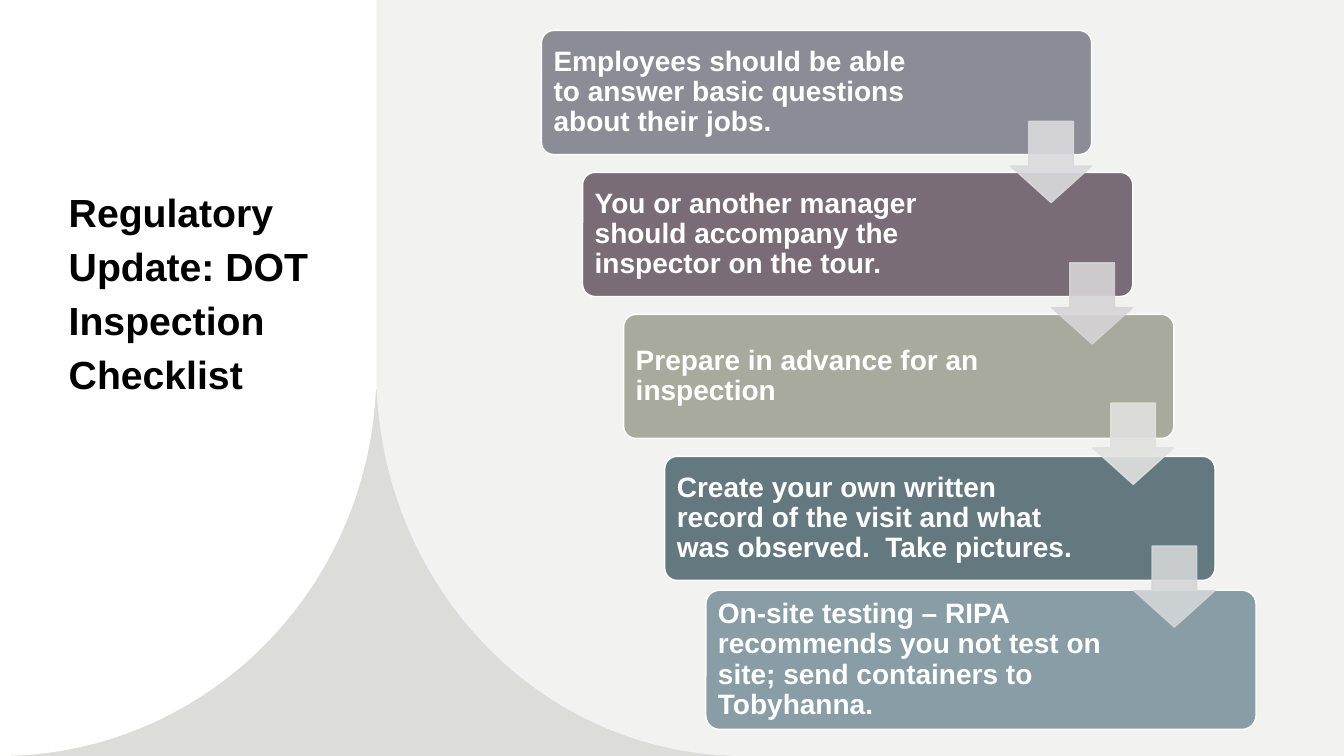
from math import cos, pi, sin

from lxml import etree
from pptx import Presentation
from pptx.dml.color import RGBColor
from pptx.enum.shapes import MSO_SHAPE
from pptx.enum.text import MSO_ANCHOR
from pptx.oxml.ns import qn
from pptx.util import Pt

RECT = MSO_SHAPE.RECTANGLE
ROUNDED = MSO_SHAPE.ROUNDED_RECTANGLE
DOWN_ARROW = MSO_SHAPE.DOWN_ARROW
TOP, MIDDLE = MSO_ANCHOR.TOP, MSO_ANCHOR.MIDDLE

SLIDE_W, SLIDE_H = 960, 540
WHITE = "FFFFFF"


def color(hex_string):
    return RGBColor.from_string(hex_string)


def quarter_arc(cx, cy, rx, ry, start, end, steps=60):
    """Points on a quarter ellipse, angles in radians with y downwards."""
    angles = (start + (end - start) * i / steps for i in range(steps + 1))
    return [(cx + rx * cos(a), cy + ry * sin(a)) for a in angles]


class ChecklistSlide:
    font = "Arial"

    def __init__(self, slide):
        self.slide = slide

    def paint(self, shape, fill, line=None, opacity=100):
        shape.shadow.inherit = False
        shape.fill.solid()
        shape.fill.fore_color.rgb = color(fill)
        if line:
            shape.line.color.rgb = color(line)
            shape.line.width = Pt(1)
        else:
            shape.line.fill.background()
        if opacity < 100:
            for srgb in list(shape.element.spPr.iter(qn("a:srgbClr"))):
                etree.SubElement(srgb, qn("a:alpha"), val=str(opacity * 1000))

    def preset(self, kind, box, fill, line=None, adjustments=(), opacity=100):
        shape = self.slide.shapes.add_shape(kind, *map(Pt, box))
        for i, value in enumerate(adjustments):
            shape.adjustments[i] = value
        self.paint(shape, fill, line, opacity)

    def outline(self, points, fill):
        start, *rest = [(Pt(x), Pt(y)) for x, y in points]
        builder = self.slide.shapes.build_freeform(*start)
        builder.add_line_segments(rest, close=True)
        self.paint(builder.convert_to_shape(), fill)

    def text(self, box, wording, size, ink, spacing, anchor, inset):
        frame = self.slide.shapes.add_textbox(*map(Pt, box)).text_frame
        frame.word_wrap = True
        frame.vertical_anchor = anchor
        frame.margin_left = frame.margin_right = Pt(inset[0])
        frame.margin_top = frame.margin_bottom = Pt(inset[1])
        paragraph = frame.paragraphs[0]
        paragraph.text = wording
        paragraph.line_spacing = spacing
        paragraph.font.name = self.font
        paragraph.font.size = Pt(size)
        paragraph.font.bold = True
        paragraph.font.color.rgb = color(ink)


# Wording, card colour, text width
STEPS = [
    ("Employees should be able to answer basic questions about their jobs.",
     "8C8C96", 286.6),
    ("You or another manager should accompany the inspector on the tour.",
     "7A6C76", 301),
    ("Prepare in advance for an inspection", "A7AA9D", 301),
    ("Create your own written record of the visit and what was observed.  "
     "Take pictures.", "63787F", 301),
    ("On-site testing – RIPA recommends you not test on site; send containers "
     "to Tobyhanna.", "889DA5", 300.5),
]
# Top and colour of the arrow below each step but the last
ARROWS = [(86.7, "DADADD"), (187.8, "D7D4D6"), (288, "E1E2DF"), (390, "D3D6D8")]

CARD_LEFT, CARD_INDENT, CARD_W = 386.8, 29.35, 393
CARD_TOP, CARD_PITCH, CARD_H = 21.8, 101.4, 88.6
LAST_TOP, LAST_H = 421.6, 99.4
CARD_PAD = 2.6
ARROW_SIZE = 58
PANEL_LEFT, CURVE_TOP = 268.8, 265.5


def main():
    prs = Presentation()
    prs.slide_width, prs.slide_height = Pt(SLIDE_W), Pt(SLIDE_H)
    page = ChecklistSlide(prs.slides.add_slide(prs.slide_layouts[6]))

    # Curved backdrop
    curve_h = SLIDE_H - CURVE_TOP
    page.preset(RECT, (0, 278, 531, 262), "DCDDD8")
    page.outline([(0, 0), (PANEL_LEFT, 0)]
                 + quarter_arc(0, CURVE_TOP, PANEL_LEFT, curve_h, 0, pi / 2),
                 WHITE)

    # Title
    page.text((42, 126, 207, 196.5),
              "Regulatory Update: DOT Inspection Checklist",
              28, "000000", 1.15, TOP, (7.2, 3.6))

    # Panel behind the steps
    curve_w = 262
    page.outline([(PANEL_LEFT, 0), (SLIDE_W, 0), (SLIDE_W, SLIDE_H)]
                 + quarter_arc(PANEL_LEFT + curve_w, CURVE_TOP, curve_w, curve_h,
                               pi / 2, pi),
                 "F2F3F1")

    # Step cards
    for i, (wording, fill, text_w) in enumerate(STEPS):
        left = CARD_LEFT + i * CARD_INDENT
        last = i == len(STEPS) - 1
        top = LAST_TOP if last else CARD_TOP + i * CARD_PITCH
        height = LAST_H if last else CARD_H
        page.preset(ROUNDED, (left, top, CARD_W, height), fill, WHITE, [0.1])
        page.text((left + CARD_PAD, top + CARD_PAD, text_w, height - 2 * CARD_PAD),
                  wording, 20, WHITE, 0.9, MIDDLE, (6, 6))

    # Arrows between the steps
    for i, (top, fill) in enumerate(ARROWS):
        left = CARD_LEFT + i * CARD_INDENT + CARD_W - ARROW_SIZE
        page.preset(DOWN_ARROW, (left, top, ARROW_SIZE, ARROW_SIZE), fill, fill,
                    [0.55, 0.45], opacity=90)

    prs.save("out.pptx")


if __name__ == "__main__":
    main()
